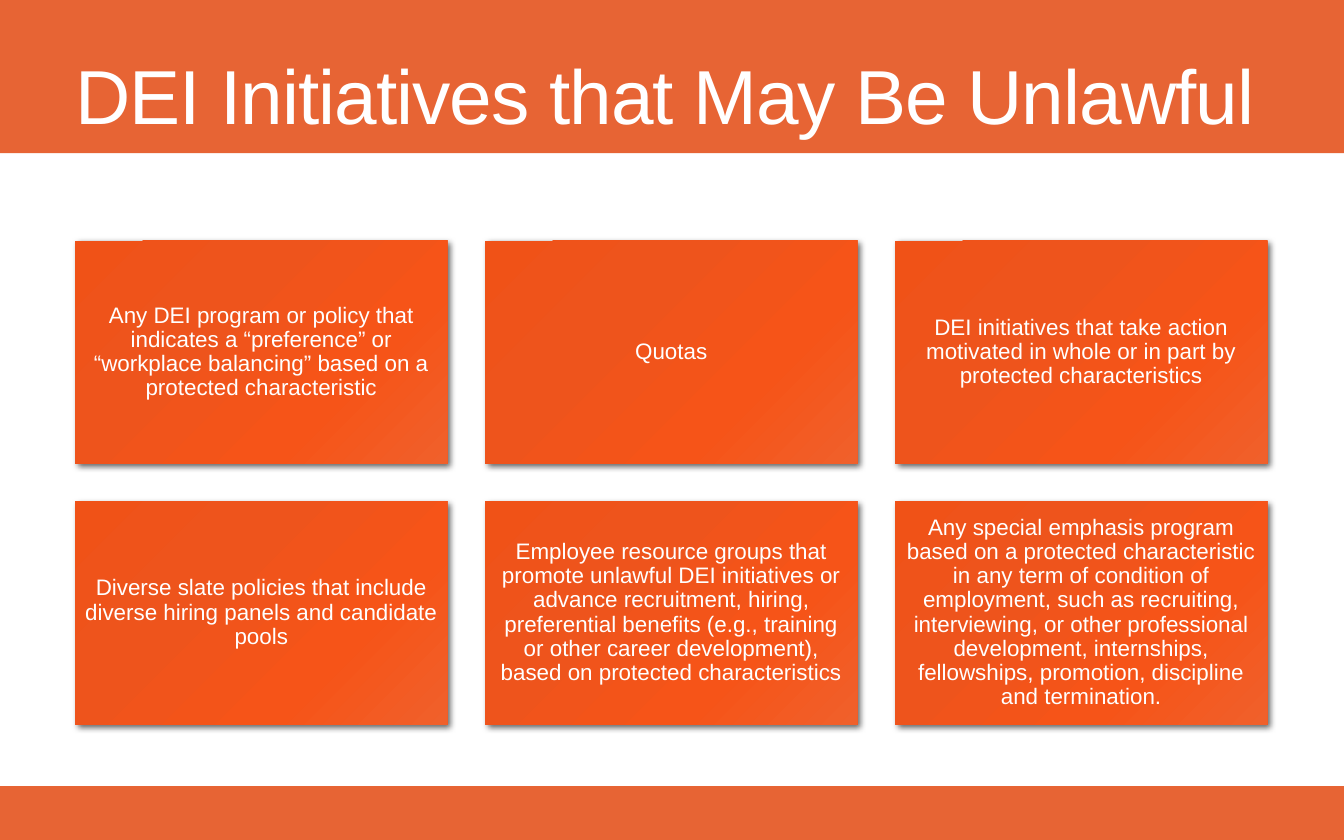
from lxml.etree import SubElement
from pptx import Presentation
from pptx.dml.color import RGBColor
from pptx.enum.shapes import MSO_SHAPE
from pptx.enum.text import MSO_ANCHOR, MSO_AUTO_SIZE, PP_ALIGN
from pptx.oxml.ns import qn
from pptx.util import Inches, Pt

COLORS = {"band": "E76434", "text": "FFFFFF", "shadow": "000000"}
CARD_GRADIENT = {0: "F05217", 34: "EE541C", 70: "F65418", 100: "F0602B"}
FONT = "Arial"

# Grid of cards, in inches
COLUMNS = 3
LEFT, TOP = 0.56, 1.79
CARD_WIDTH, CARD_HEIGHT = 2.77, 1.66
GAP = 0.28

TITLE = "DEI Initiatives that May Be Unlawful"
INITIATIVES = [
    "Any DEI program or policy that indicates a “preference” or “workplace balancing” "
    "based on a protected characteristic",
    "Quotas",
    "DEI initiatives that take action motivated in whole or in part by protected "
    "characteristics",
    "Diverse slate policies that include diverse hiring panels and candidate pools",
    "Employee resource groups that promote unlawful DEI initiatives or advance "
    "recruitment, hiring, preferential benefits (e.g., training or other career "
    "development), based on protected characteristics",
    "Any special emphasis program based on a protected characteristic in any term of "
    "condition of employment, such as recruiting, interviewing, or other professional "
    "development, internships, fellowships, promotion, discipline and termination.",
]


def add_rectangle(page, left, top, width, height):
    box = page.shapes.add_shape(MSO_SHAPE.RECTANGLE, left, top, width, height)
    box.shadow.inherit = False
    box.line.fill.background()
    return box


def add_band(page, top, height):
    band = add_rectangle(page, 0, Inches(top), Inches(10), Inches(height))
    band.fill.solid()
    band.fill.fore_color.rgb = RGBColor.from_string(COLORS["band"])


def write_text(box, text, size, align, line_spacing, inset):
    frame = box.text_frame
    frame.text = text
    frame.word_wrap = True
    frame.auto_size = MSO_AUTO_SIZE.NONE
    frame.vertical_anchor = MSO_ANCHOR.MIDDLE
    frame.margin_left = frame.margin_right = Inches(inset)
    frame.margin_top = frame.margin_bottom = Inches(inset)
    para = frame.paragraphs[0]
    para.alignment = align
    para.line_spacing = line_spacing
    span = para.runs[0]
    span.font.name = FONT
    span.font.size = Pt(size)
    span.font.color.rgb = RGBColor.from_string(COLORS["text"])
    return span


def add_title(page):
    title = page.shapes.title
    title.left, title.top = Inches(LEFT), Inches(0.42)
    title.width, title.height = Inches(8.87), Inches(0.67)
    span = write_text(title, TITLE, 41, PP_ALIGN.LEFT, 0.85, 0)
    span._r.get_or_add_rPr().set("spc", "-50")


def fill_gradient(box):
    box.fill.gradient()
    box.fill.gradient_angle = 315
    stops = box._element.spPr.find(".//" + qn("a:gsLst"))
    for stop in list(stops):
        stops.remove(stop)
    for position, color in CARD_GRADIENT.items():
        stop = SubElement(stops, qn("a:gs"), pos=str(position * 1000))
        SubElement(stop, qn("a:srgbClr"), val=color)


def cast_shadow(box):
    effects = box._element.spPr.find(qn("a:effectLst"))
    shadow = SubElement(effects, qn("a:outerShdw"), blurRad=str(Pt(3.5)),
                        dist=str(Pt(2)), dir=str(45 * 60000), rotWithShape="0")
    color = SubElement(shadow, qn("a:srgbClr"), val=COLORS["shadow"])
    SubElement(color, qn("a:alpha"), val="60000")


def add_card(page, index, text):
    row, column = divmod(index, COLUMNS)
    card = add_rectangle(
        page,
        Inches(LEFT + column * (CARD_WIDTH + GAP)),
        Inches(TOP + row * (CARD_HEIGHT + GAP)),
        Inches(CARD_WIDTH), Inches(CARD_HEIGHT))
    fill_gradient(card)
    cast_shadow(card)
    write_text(card, text, 12, PP_ALIGN.CENTER, 0.9, 0.05)


def main():
    deck = Presentation()
    deck.slide_width, deck.slide_height = Inches(10), Inches(6.25)
    page = deck.slides.add_slide(deck.slide_layouts[5])

    # Bands at the foot and head, with the title in front
    add_band(page, 5.85, 0.4)
    add_band(page, 0, 1.14)
    add_title(page)
    page.shapes._spTree.append(page.shapes.title._element)

    # Cards, row by row
    for index, text in enumerate(INITIATIVES):
        add_card(page, index, text)

    deck.save("out.pptx")


if __name__ == "__main__":
    main()
